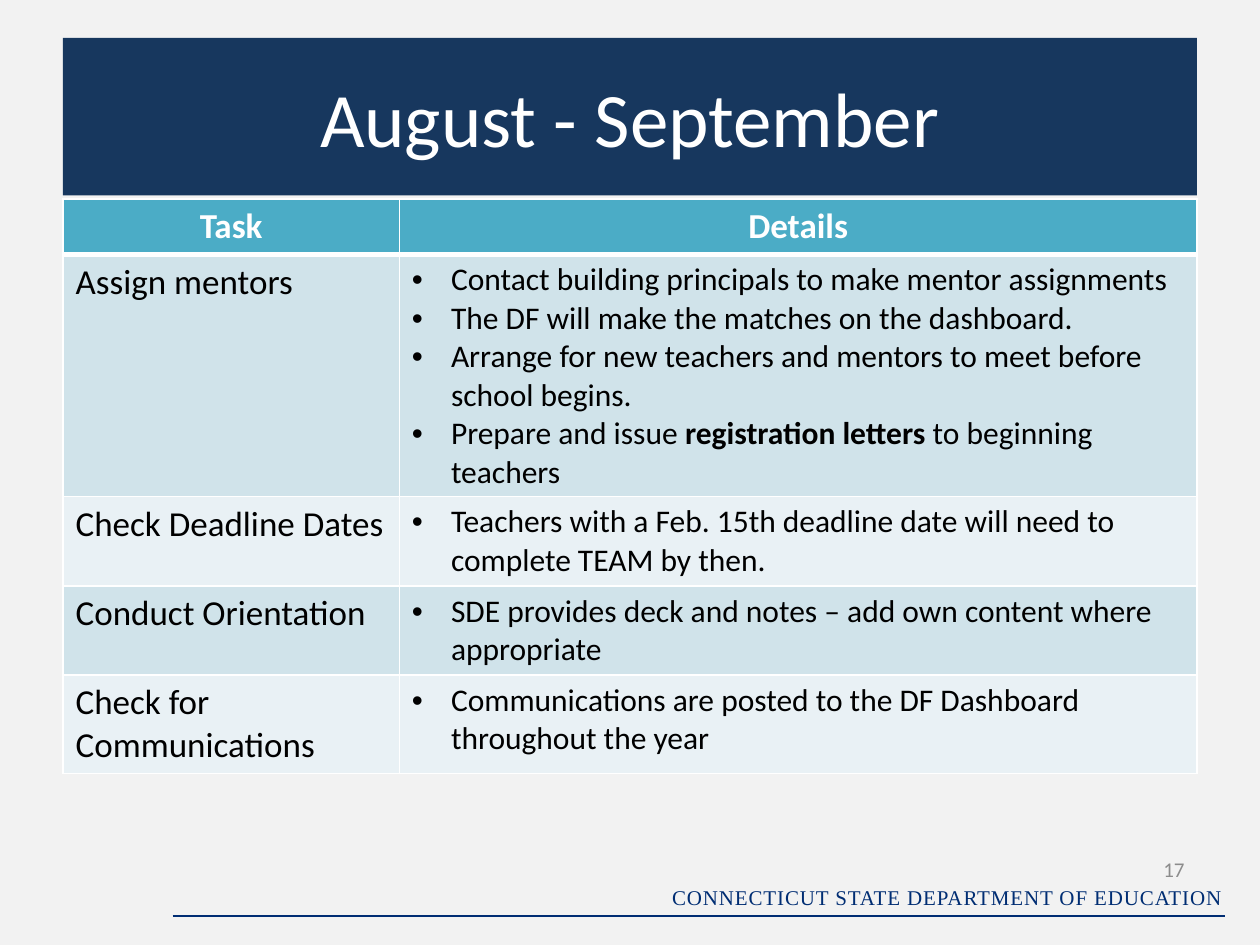
from lxml.etree import SubElement
from pptx import Presentation
from pptx.dml.color import RGBColor
from pptx.enum.shapes import MSO_CONNECTOR, MSO_SHAPE
from pptx.enum.text import MSO_ANCHOR, PP_ALIGN
from pptx.oxml import parse_xml
from pptx.oxml.ns import nsdecls, qn
from pptx.util import Inches, Pt

NAVY, BLUE, TEAL, WHITE, BLACK = "17375E", "002D73", "4BACC6", "FFFFFF", "000000"
BANDS = ["D0E3EA", "E9F1F5"]
HEAD = ["Task", "Details"]
TASKS = [
    ("Assign mentors", [
        ["Contact building principals to make mentor assignments"],
        ["The DF will make the matches on the dashboard."],
        ["Arrange for new teachers and mentors to meet before school begins."],
        ["Prepare and issue ", "registration letters ", "to beginning teachers"],
    ]),
    ("Check Deadline Dates", [
        ["Teachers with a Feb. 15th deadline date will need to complete TEAM by then."]]),
    ("Conduct Orientation", [
        ["SDE provides deck and notes – add own content where appropriate"]]),
    ("Check for Communications", [
        ["Communications are posted to the DF Dashboard throughout the year"]]),
]


def paint(color, code):
    color.rgb = RGBColor.from_string(code)


def write(para, text, code, **style):
    """Add a run; style holds font attributes that differ from Calibri."""
    run = para.add_run()
    run.text = text
    for key, value in {"name": "Calibri", **style}.items():
        setattr(run.font, key, value)
    paint(run.font.color, code)
    return run


deck = Presentation()
deck.slide_width, deck.slide_height = Inches(10), Inches(7.5)
slide = deck.slides.add_slide(deck.slide_layouts[6])
slide.background.fill.solid()
paint(slide.background.fill.fore_color, "F2F2F2")
shapes = slide.shapes

# Footer
rule = shapes.add_connector(
    MSO_CONNECTOR.STRAIGHT, Inches(1.37), Inches(7.27), Inches(9.72), Inches(7.27))
paint(rule.line.color, BLUE)
rule.line.width = Pt(0.75)
SubElement(rule._element.spPr, qn("a:effectLst"))

footer = shapes.add_textbox(Inches(5.18), Inches(6.97), Inches(4.62), Inches(0.3))
footer.text_frame.word_wrap = True
para = footer.text_frame.paragraphs[0]
para.alignment = PP_ALIGN.RIGHT
run = write(para, "CONNECTICUT STATE DEPARTMENT OF EDUCATION", BLUE,
            name="Times New Roman", size=Pt(12))
run.font._element.set("spc", "50")

# Title
title = shapes.add_shape(
    MSO_SHAPE.RECTANGLE, Inches(0.5), Inches(0.3), Inches(9), Inches(1.25))
title.shadow.inherit = False
title.fill.solid()
paint(title.fill.fore_color, NAVY)
title.line.fill.background()
title.text_frame.vertical_anchor = MSO_ANCHOR.MIDDLE
para = title.text_frame.paragraphs[0]
para.alignment = PP_ALIGN.CENTER
write(para, "August - September", WHITE, size=Pt(44))

# Page number
number = shapes.add_textbox(Inches(8.97), Inches(6.7), Inches(0.53), Inches(0.4))
number.text_frame.word_wrap = True
number.text_frame.vertical_anchor = MSO_ANCHOR.MIDDLE
para = number.text_frame.paragraphs[0]
para.alignment = PP_ALIGN.RIGHT
write(para, "17", "8C8C8C", size=Pt(12))

# Task table
table = shapes.add_table(
    len(TASKS) + 1, 2, Inches(0.5), Inches(1.58), Inches(9), Inches(4.56)).table
for col, width in zip(table.columns, [2.67, 6.33]):
    col.width = Inches(width)
for row, height in zip(table.rows, [0.44, 1.92, 0.71, 0.71, 0.78]):
    row.height = Inches(height)

for r, row in enumerate(table.rows):
    for cell in row.cells:
        props = cell._tc.get_or_add_tcPr()
        for side in "LRTB":
            thick = (r, side) in [(0, "B"), (1, "T")]
            props.append(parse_xml(
                f'<a:ln{side} {nsdecls("a")} w="{Pt(3 if thick else 1)}"><a:solidFill>'
                f'<a:srgbClr val="{WHITE}"/></a:solidFill></a:ln{side}>'))
        cell.fill.solid()
        paint(cell.fill.fore_color, BANDS[(r - 1) % 2] if r else TEAL)

for c, label in enumerate(HEAD):
    para = table.cell(0, c).text_frame.paragraphs[0]
    para.alignment = PP_ALIGN.CENTER
    write(para, label, WHITE, size=Pt(20), bold=True)

for r, (task, points) in enumerate(TASKS, 1):
    para = table.cell(r, 0).text_frame.paragraphs[0]
    write(para, task, BLACK, size=Pt(20), bold=False)
    frame = table.cell(r, 1).text_frame
    for i, parts in enumerate(points):
        para = frame.add_paragraph() if i else frame.paragraphs[0]
        props = para._p.get_or_add_pPr()
        props.set("marL", str(Inches(0.31)))
        props.set("indent", str(Inches(-0.31)))
        SubElement(props, qn("a:buFont"), typeface="Arial")
        SubElement(props, qn("a:buChar"), char="•")
        for j, part in enumerate(parts):
            write(para, part, BLACK, size=Pt(18), bold=j == 1)

deck.save("out.pptx")
